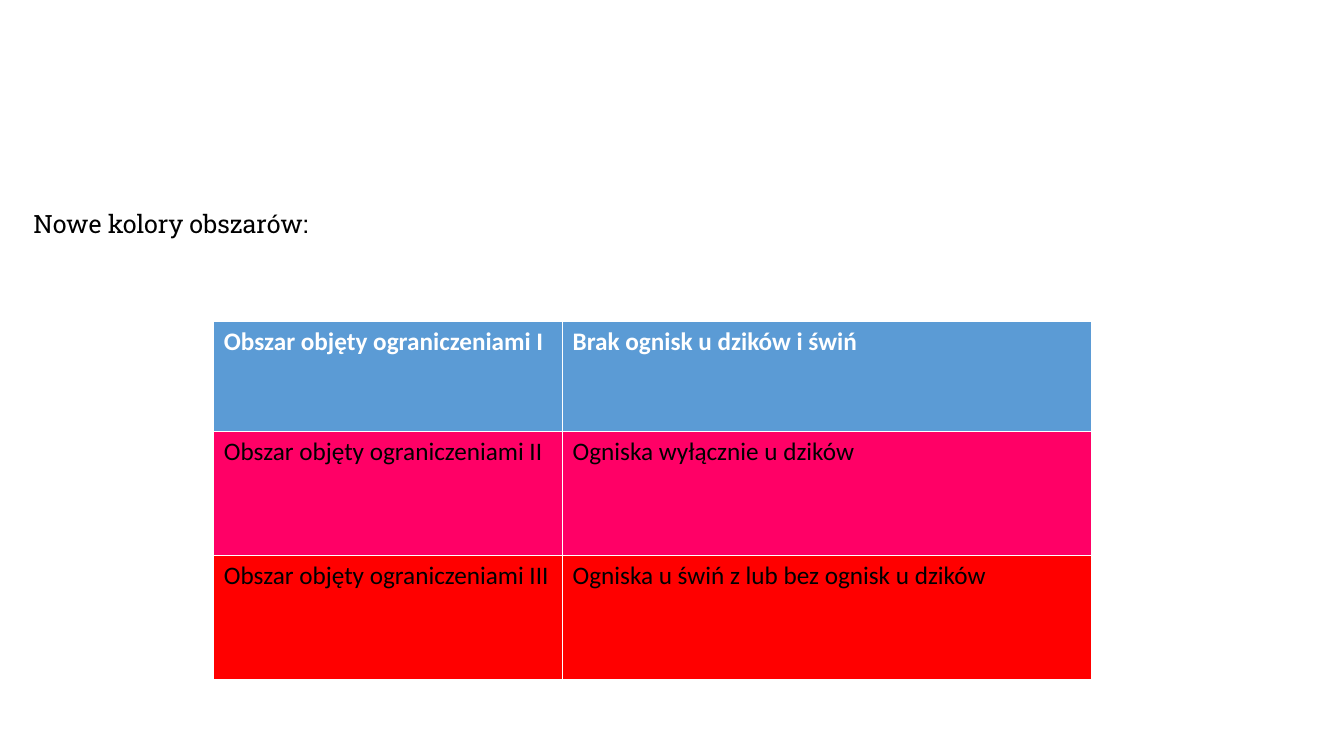
from dataclasses import dataclass

from pptx import Presentation
from pptx.dml.color import RGBColor
from pptx.enum.text import MSO_ANCHOR, MSO_AUTO_SIZE, PP_ALIGN
from pptx.slide import Slide
from pptx.text.text import _Paragraph
from pptx.util import Inches, Pt

TOP = MSO_ANCHOR.TOP
NO_AUTOFIT = MSO_AUTO_SIZE.NONE
JUSTIFY = PP_ALIGN.JUSTIFY
TITLE_ONLY_LAYOUT = 5
TEXT_SIZE = Pt(18)
COLORS = {
    "white": "FFFFFF",
    "black": "000000",
    "blue": "5B9BD5",
    "pink": "FF0066",
    "red": "FF0000",
}


@dataclass(frozen=True)
class Zone:
    name: str
    outbreaks: str
    fill: str
    text: str
    height: float
    bold: bool = False


ZONES = [
    Zone("Obszar objęty ograniczeniami I", "Brak ognisk u dzików i świń",
         "blue", "white", 1.09, True),
    Zone("Obszar objęty ograniczeniami II", "Ogniska wyłącznie u dzików",
         "pink", "black", 1.23),
    Zone("Obszar objęty ograniczeniami III", "Ogniska u świń z lub bez ognisk u dzików",
         "red", "black", 1.23),
]
COLUMN_WIDTHS = [3.46, 5.25]


def add_run(paragraph: _Paragraph, text: str, font: str, color: str, bold: bool = False) -> None:
    run = paragraph.add_run()
    run.text = text
    run.font.name = font
    run.font.size = TEXT_SIZE
    run.font.bold = bold
    run.font.color.rgb = RGBColor.from_string(COLORS[color])


def add_heading(slide: Slide, text: str) -> None:
    heading = slide.shapes.title
    heading.left, heading.top = Inches(0.23), Inches(1.09)
    heading.width, heading.height = Inches(12.33), Inches(4.68)
    frame = heading.text_frame
    frame.word_wrap = True
    frame.auto_size = NO_AUTOFIT
    frame.vertical_anchor = TOP
    frame.margin_top = Inches(0.98)
    paragraph = frame.paragraphs[0]
    paragraph.alignment = JUSTIFY
    add_run(paragraph, text, "Roboto Slab", "black")


def add_zone_table(slide: Slide, zones: list[Zone]) -> None:
    table = slide.shapes.add_table(
        len(zones), len(COLUMN_WIDTHS), Inches(2.12), Inches(3.19),
        Inches(sum(COLUMN_WIDTHS)), Inches(sum(zone.height for zone in zones)),
    ).table
    for column, width in zip(table.columns, COLUMN_WIDTHS):
        column.width = Inches(width)
    for row, zone in zip(table.rows, zones):
        row.height = Inches(zone.height)
        for cell, text in zip(row.cells, (zone.name, zone.outbreaks)):
            cell.fill.solid()
            cell.fill.fore_color.rgb = RGBColor.from_string(COLORS[zone.fill])
            add_run(cell.text_frame.paragraphs[0], text, "Calibri", zone.text, zone.bold)


def main() -> None:
    presentation = Presentation()
    presentation.slide_width = Inches(13.33)
    presentation.slide_height = Inches(7.5)
    slide = presentation.slides.add_slide(presentation.slide_layouts[TITLE_ONLY_LAYOUT])
    add_heading(slide, "Nowe kolory obszarów:")
    add_zone_table(slide, ZONES)
    presentation.save("out.pptx")


if __name__ == "__main__":
    main()
